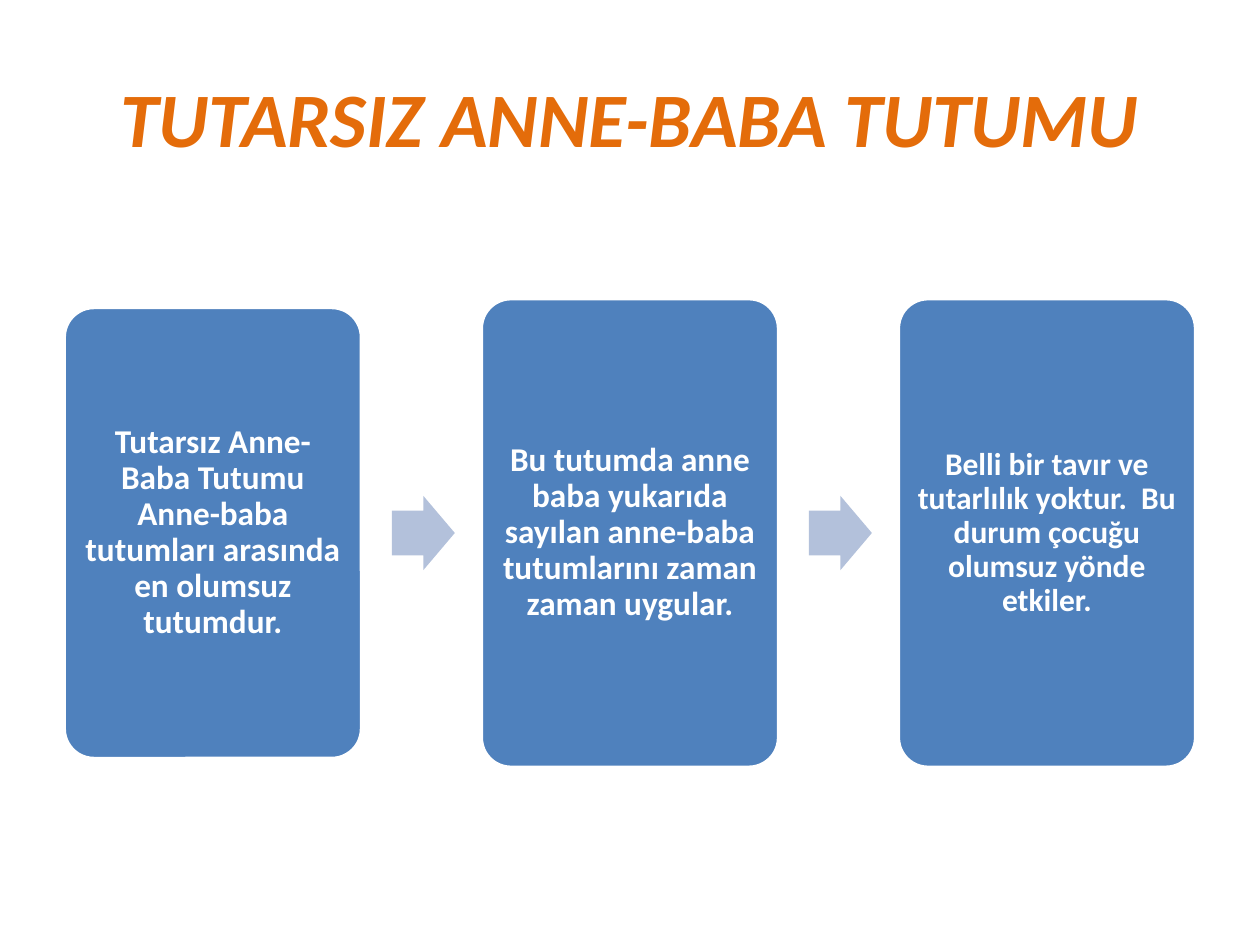
from dataclasses import dataclass

from pptx import Presentation
from pptx.dml.color import RGBColor
from pptx.enum.shapes import MSO_SHAPE
from pptx.enum.text import MSO_ANCHOR, PP_ALIGN
from pptx.util import Inches, Pt


@dataclass(frozen=True)
class Theme:
    """Colours, font and type sizes of the deck."""
    font: str = "Calibri"
    title: str = "E46C0A"
    card: str = "4F81BD"
    arrow: str = "B3C1DB"
    light: str = "FFFFFF"
    title_size: int = 44
    card_size: int = 19
    small_size: int = 18


class Flow:
    """Draws a titled row of cards, placed in inches on a column grid."""
    LEFT, PITCH, MIDDLE = 0.51, 3.31, 4.23
    CARD_W, ARROW_W, ARROW_H, ARROW_OFFSET = 2.36, 0.5, 0.59, 2.6

    def __init__(self, prs, theme):
        self.theme = theme
        self.s = prs.slides.add_slide(prs.slide_layouts[6])

    def set_text(self, sp, text, color, inset, spacing=1.0, **style):
        tf = sp.text_frame
        frame = {"word_wrap": True, "vertical_anchor": MSO_ANCHOR.MIDDLE}
        frame.update({f"margin_{side}": Inches(inset)
                      for side in ("left", "top", "right", "bottom")})
        for name, value in frame.items():
            setattr(tf, name, value)
        p = tf.paragraphs[0]
        p.alignment, p.line_spacing = PP_ALIGN.CENTER, spacing
        r = p.add_run()
        r.text = text
        for name, value in {"name": self.theme.font, "bold": True, **style}.items():
            setattr(r.font, name, value)
        r.font.color.rgb = RGBColor.from_string(color)

    def shape(self, kind, column, offset, width, height, fill, adjustments):
        left = self.LEFT + column * self.PITCH + offset
        sp = self.s.shapes.add_shape(kind, Inches(left), Inches(self.MIDDLE - height / 2),
                                     Inches(width), Inches(height))
        sp.shadow.inherit = False
        sp.fill.solid()
        sp.fill.fore_color.rgb = RGBColor.from_string(fill)
        sp.line.fill.background()
        for i, value in enumerate(adjustments):
            sp.adjustments[i] = value
        return sp

    def title(self, text):
        sp = self.s.shapes.add_textbox(Inches(0.5), Inches(0.3), Inches(9), Inches(1.25))
        self.set_text(sp, text, self.theme.title, 0.05,
                      size=Pt(self.theme.title_size), italic=True)

    def card(self, column, text, height, size, inset):
        sp = self.shape(MSO_SHAPE.ROUNDED_RECTANGLE, column, 0, self.CARD_W, height,
                        self.theme.card, [0.1])
        sp.line.color.rgb = RGBColor.from_string(self.theme.light)
        sp.line.width = Pt(2)
        self.set_text(sp, text, self.theme.light, inset, 0.9, size=Pt(size))

    def arrow(self, column):
        self.shape(MSO_SHAPE.RIGHT_ARROW, column, self.ARROW_OFFSET, self.ARROW_W,
                   self.ARROW_H, self.theme.arrow, [0.6, 0.5])


def main():
    prs = Presentation()
    prs.slide_width, prs.slide_height = Inches(10), Inches(7.5)
    theme = Theme()
    flow = Flow(prs, theme)
    flow.title("TUTARSIZ ANNE-BABA TUTUMU")
    cards = [
        ("Tutarsız Anne-Baba Tutumu Anne-baba tutumları arasında en olumsuz tutumdur.",
         3.58, theme.card_size, 0.08),
        ("Bu tutumda anne baba yukarıda sayılan anne-baba tutumlarını zaman zaman uygular.",
         3.72, theme.card_size, 0.08),
        ("Belli bir tavır ve tutarlılık yoktur.  Bu durum çocuğu olumsuz yönde etkiler.",
         3.72, theme.small_size, 0.07),
    ]
    for column, card in enumerate(cards):
        flow.card(column, *card)
        if column < len(cards) - 1:
            flow.arrow(column)
    prs.save("out.pptx")


if __name__ == "__main__":
    main()
